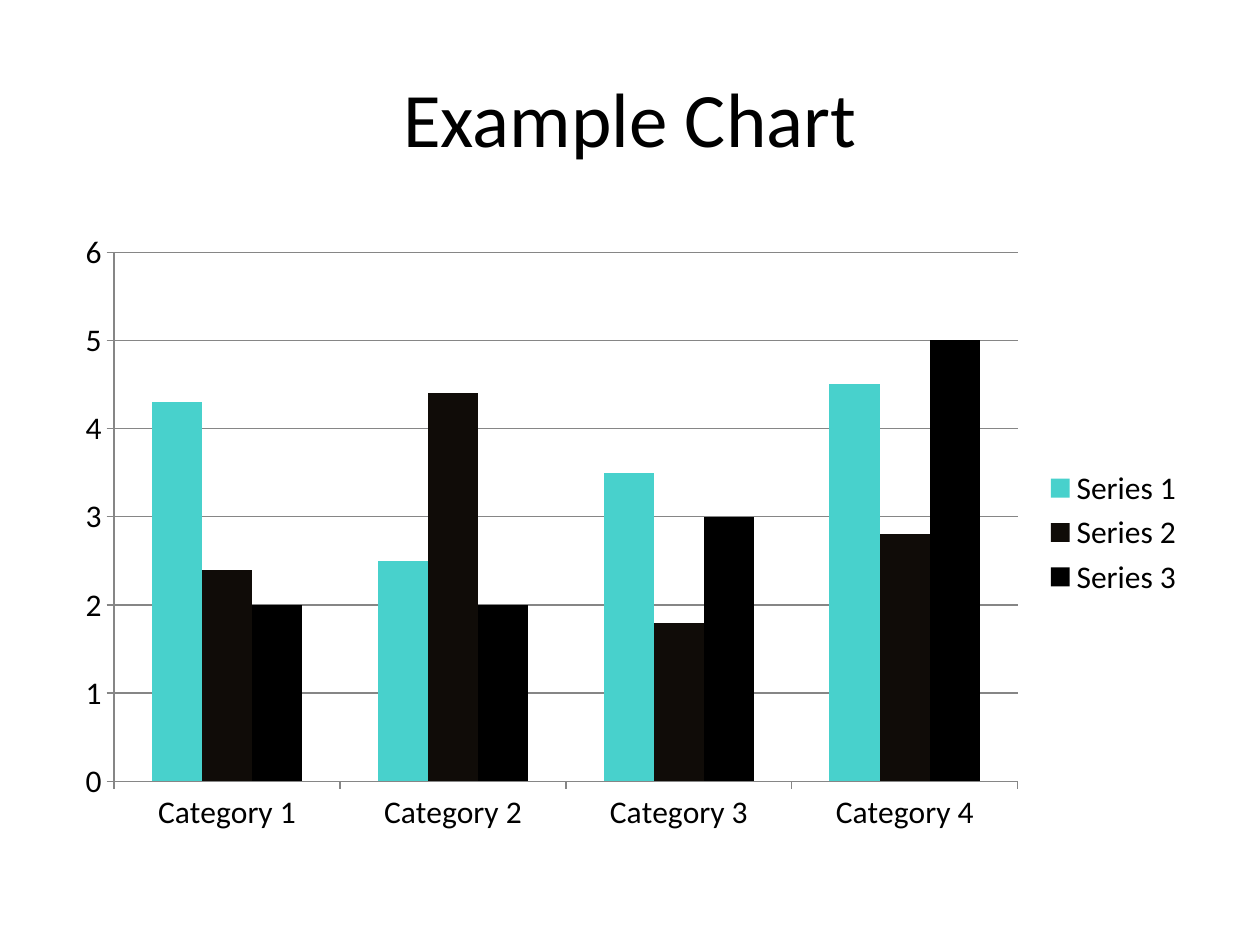
from pptx import Presentation
from pptx.chart.data import CategoryChartData
from pptx.dml.color import RGBColor
from pptx.enum.chart import XL_CHART_TYPE, XL_LEGEND_POSITION, XL_TICK_MARK
from pptx.enum.text import MSO_ANCHOR, PP_ALIGN
from pptx.util import Cm, Pt

COLUMNS = XL_CHART_TYPE.COLUMN_CLUSTERED
LEGEND_RIGHT = XL_LEGEND_POSITION.RIGHT
TICK_OUT = XL_TICK_MARK.OUTSIDE
TICK_NONE = XL_TICK_MARK.NONE
MIDDLE = MSO_ANCHOR.MIDDLE
CENTER = PP_ALIGN.CENTER

COLORS = {
    "text": "000000",
    "line": "868686",
    "Series 1": "48D1CC",
    "Series 2": "100C08",
    "Series 3": "000000",
}
CATEGORIES = ["Category 1", "Category 2", "Category 3", "Category 4"]
SERIES = {
    "Series 1": (4.3, 2.5, 3.5, 4.5),
    "Series 2": (2.4, 4.4, 1.8, 2.8),
    "Series 3": (2, 2, 3, 5),
}


class ChartSlide:
    """Holds the text style and the slide that receives each element."""

    def __init__(self, deck, font_name="Calibri"):
        self.slide = deck.slides.add_slide(deck.slide_layouts[5])
        self.font_name = font_name

    def apply(self, target, formats):
        for name, value in formats.items():
            setattr(target, name, value)

    def style_font(self, font, size):
        self.apply(font, {"name": self.font_name, "size": Pt(size), "bold": False})
        font.color.rgb = RGBColor.from_string(COLORS["text"])

    def style_line(self, line):
        line.color.rgb = RGBColor.from_string(COLORS["line"])
        line.width = Pt(0.75)

    def title(self, heading, left, top, width, height):
        title = self.slide.shapes.title
        self.apply(title, {"left": left, "top": top, "width": width, "height": height})
        title.text_frame.text = heading
        title.text_frame.vertical_anchor = MIDDLE
        paragraph = title.text_frame.paragraphs[0]
        paragraph.alignment = CENTER
        self.style_font(paragraph.runs[0].font, 44)

    def column_chart(self, categories, series, left, top, width, height):
        data = CategoryChartData()
        data.categories = categories
        for name, values in series.items():
            data.add_series(name, values)
        chart = self.slide.shapes.add_chart(COLUMNS, left, top, width, height, data).chart
        self.apply(chart, {"has_title": False, "has_legend": True})
        self.apply(chart.legend, {"position": LEGEND_RIGHT, "include_in_layout": False})
        self.style_font(chart.font, 18)

        columns = chart.plots[0]
        self.apply(columns, {"gap_width": 150, "overlap": 0, "vary_by_categories": False})
        for column in columns.series:
            column.format.fill.solid()
            column.format.fill.fore_color.rgb = RGBColor.from_string(COLORS[column.name])

        for axis in (chart.category_axis, chart.value_axis):
            self.apply(axis, {"major_tick_mark": TICK_OUT, "minor_tick_mark": TICK_NONE})
            self.style_line(axis.format.line)
        values = chart.value_axis
        self.apply(values, {"minimum_scale": 0, "maximum_scale": 6, "major_unit": 1})
        values.has_major_gridlines = True
        self.style_line(values.major_gridlines.format.line)


def main():
    deck = Presentation()
    deck.slide_width, deck.slide_height = Cm(25.4), Cm(19.05)
    margin = Cm(1.27)
    content_width = deck.slide_width - 2 * margin
    page = ChartSlide(deck)
    page.title("Example Chart", margin, Cm(0.76), content_width, Cm(3.18))
    page.column_chart(CATEGORIES, SERIES, margin, Cm(4.45), content_width, Cm(12.57))
    deck.save("out.pptx")


if __name__ == "__main__":
    main()
